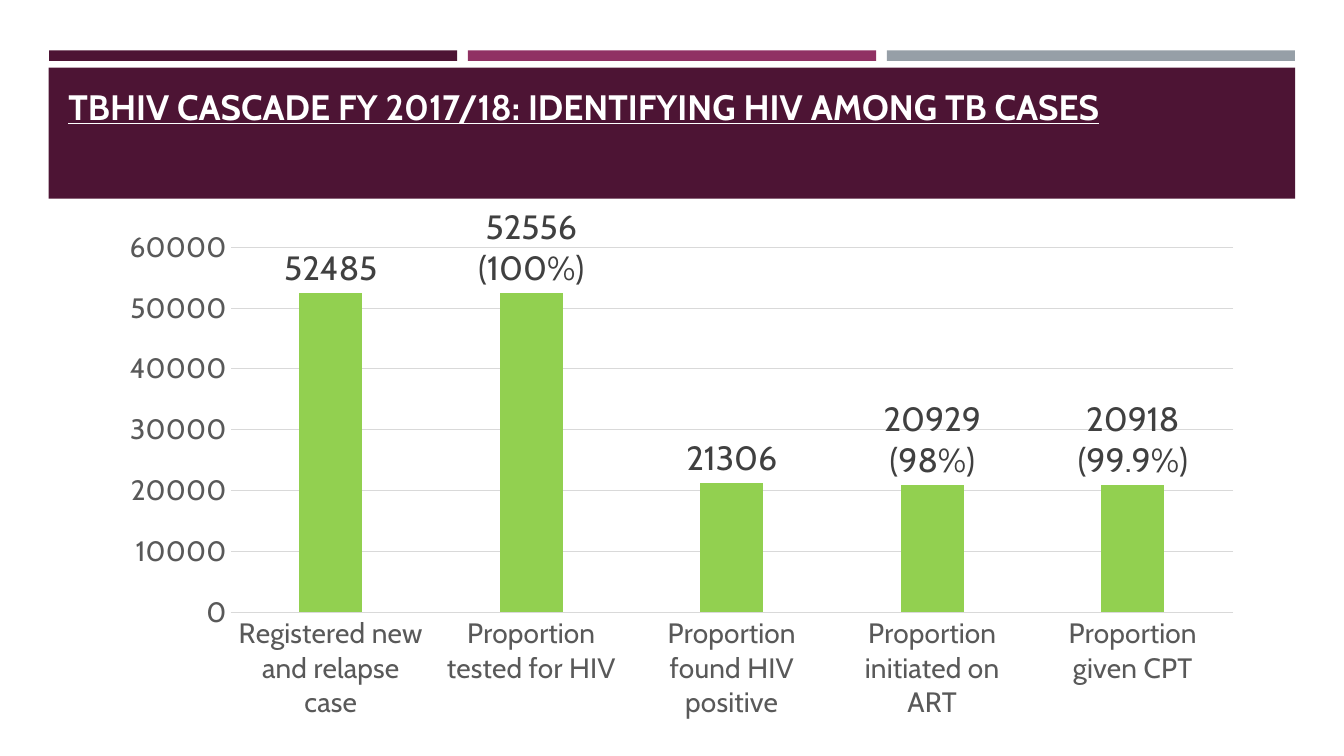
"""Build the TB/HIV cascade slide with its column chart."""
from lxml import etree
from pptx import Presentation
from pptx.chart.data import CategoryChartData
from pptx.dml.color import RGBColor
from pptx.enum.chart import XL_CHART_TYPE, XL_LABEL_POSITION, XL_TICK_MARK
from pptx.enum.shapes import MSO_SHAPE
from pptx.enum.text import MSO_ANCHOR, PP_ALIGN
from pptx.oxml.ns import qn
from pptx.util import Pt

COLUMNS = XL_CHART_TYPE.COLUMN_CLUSTERED
OUTSIDE = XL_LABEL_POSITION.OUTSIDE_END
NO_TICK = XL_TICK_MARK.NONE
RECTANGLE = MSO_SHAPE.RECTANGLE
BOTTOM = MSO_ANCHOR.BOTTOM
LEFT = PP_ALIGN.LEFT
FONT = "Cabin"
PLUM = "4D1434"
GRID = "D9D9D9"


def color(code):
    return RGBColor.from_string(code)


def style_font(font, size, code):
    font.name = FONT
    font.size = Pt(size)
    font.color.rgb = color(code)


deck = Presentation()
deck.slide_width = Pt(960)
deck.slide_height = Pt(540)
page = deck.slides.add_slide(deck.slide_layouts[6])

bands = [(35 + 299.2 * i, 36, 291.6, 7.5, code)
         for i, code in enumerate((PLUM, "903163", "969FA7"))]
bands.append((34.8, 48.4, 890.4, 93.6, PLUM))
for left, top, width, height, code in bands:
    band = page.shapes.add_shape(RECTANGLE, Pt(left), Pt(top), Pt(width), Pt(height))
    band.shadow.inherit = False
    band.fill.solid()
    band.fill.fore_color.rgb = color(code)
    band.line.fill.background()

title_box = page.shapes.add_textbox(Pt(41.8), Pt(19.4), Pt(907.2), Pt(104.4))
title_frame = title_box.text_frame
title_frame.word_wrap = True
title_frame.vertical_anchor = BOTTOM
title_frame.margin_bottom = Pt(33)
para = title_frame.paragraphs[0]
para.alignment = LEFT
span = para.add_run()
span.text = "TBHIV CASCADE FY 2017/18: IDENTIFYING HIV AMONG TB CASES"
style_font(span.font, 25.2, "FFFFFF")
span.font.bold = True
span.font.underline = True

cascade = [
    ("Registered new and relapse case", 52485, None),
    ("Proportion tested for HIV", 52556, "(100%)"),
    ("Proportion found HIV positive", 21306, None),
    ("Proportion initiated on ART", 20929, "(98%)"),
    ("Proportion given CPT", 20918, "(99.9%)"),
]
data = CategoryChartData()
data.categories = [stage for stage, count, share in cascade]
data.add_series("Series 1", [count for stage, count, share in cascade])
chart = page.shapes.add_chart(
    COLUMNS, Pt(74.2), Pt(142.6), Pt(823), Pt(378), data).chart
chart.has_title = False
chart.has_legend = False
style_font(chart.font, 10, "000000")

stage_axis, count_axis = chart.category_axis, chart.value_axis
for axis in (stage_axis, count_axis):
    axis.major_tick_mark = NO_TICK
    axis.minor_tick_mark = NO_TICK
    style_font(axis.tick_labels.font, 20, "595959")
count_axis.minimum_scale = 0
count_axis.maximum_scale = 60000
count_axis.major_unit = 10000
count_axis.format.line.fill.background()
for line in (stage_axis.format.line, count_axis.major_gridlines.format.line):
    line.color.rgb = color(GRID)
    line.width = Pt(0.75)

plot = chart.plots[0]
plot.gap_width = 219
plot.vary_by_categories = False
series = plot.series[0]
series.format.fill.solid()
series.format.fill.fore_color.rgb = color("92D050")
labels = series.data_labels
labels.show_value = True
labels.position = OUTSIDE
style_font(labels.font, 24, "404040")
for i, (stage, count, share) in enumerate(cascade):
    if share:
        label = series.points[i].data_label
        label.position = OUTSIDE
        frame = label.text_frame
        for para, text in ((frame.paragraphs[0], str(count)),
                           (frame.add_paragraph(), share)):
            span = para.add_run()
            span.text = text
            style_font(span.font, 24, "404040")

plot_area = chart.element.find(".//" + qn("c:plotArea"))
layout = plot_area.find(qn("c:layout"))
if layout is None:
    layout = etree.Element(qn("c:layout"))
    plot_area.insert(0, layout)
manual = etree.SubElement(layout, qn("c:manualLayout"))
for tag, value in (("layoutTarget", "inner"), ("xMode", "edge"), ("yMode", "edge"),
                   ("x", "0.11"), ("y", "0.09"), ("w", "0.87"), ("h", "0.69")):
    etree.SubElement(manual, qn("c:" + tag)).set("val", value)

deck.save("out.pptx")
